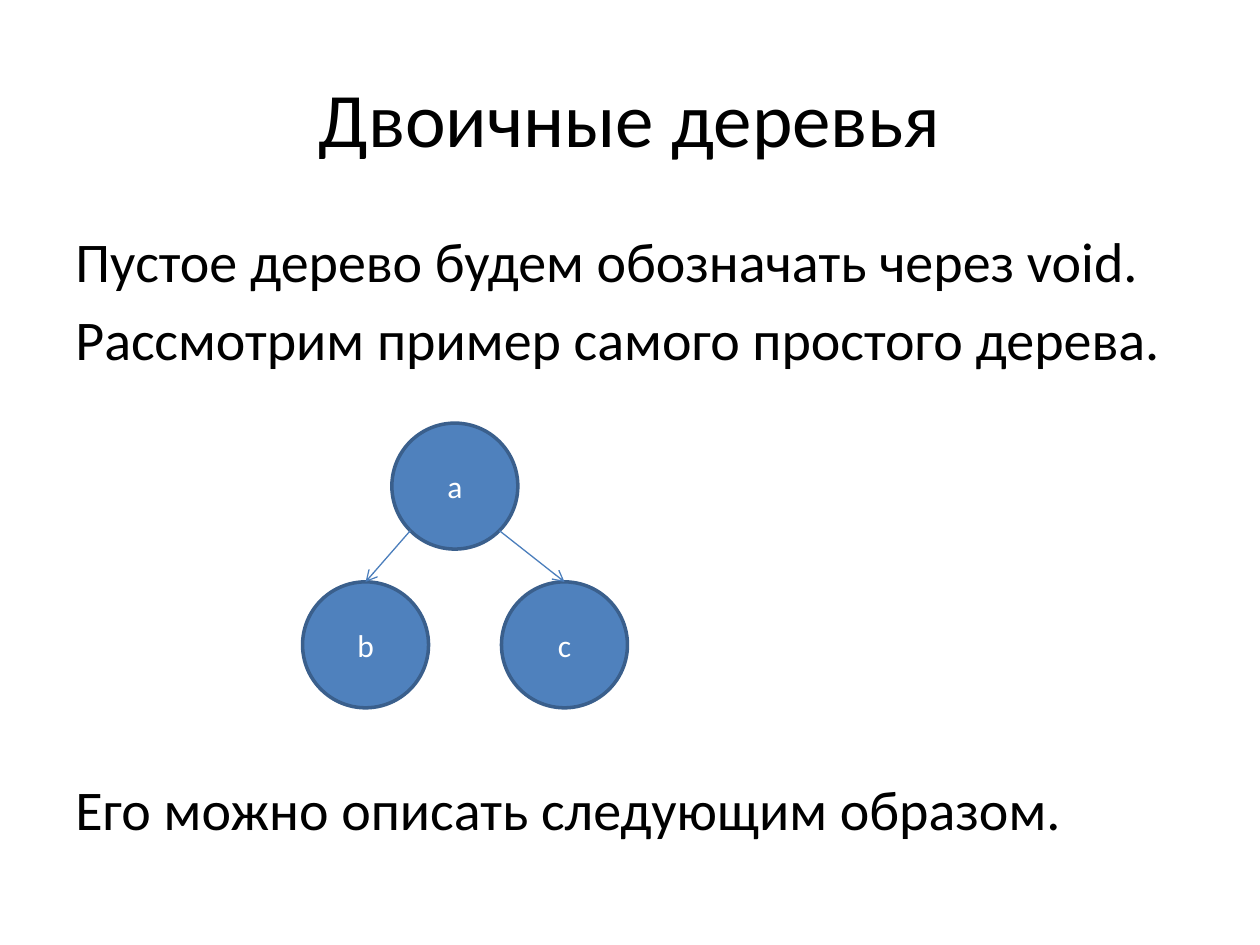
import math
from dataclasses import dataclass

import pptx
import pptx.dml.color
import pptx.enum.shapes
import pptx.enum.text
import pptx.oxml.ns
import pptx.util
from lxml import etree

Cm = pptx.util.Cm
Pt = pptx.util.Pt
RGB = pptx.dml.color.RGBColor
ALIGN = pptx.enum.text.PP_ALIGN
ANCHOR = pptx.enum.text.MSO_ANCHOR
SHAPE = pptx.enum.shapes.MSO_SHAPE
LINK = pptx.enum.shapes.MSO_CONNECTOR
qn = pptx.oxml.ns.qn

BLACK = RGB(0, 0, 0)
WHITE = RGB(255, 255, 255)
BLUE = RGB(0x4F, 0x81, 0xBD)
NAVY = RGB(0x3A, 0x5F, 0x8C)
STEEL = RGB(0x4B, 0x7E, 0xBC)

SIZE = 2.54  # node diameter, cm


@dataclass
class Node:
    name: str
    left: float
    top: float


@dataclass
class Line:
    text: str
    gap: float = 0  # space before, points


def style(para, size: int, color: RGB, align) -> None:
    para.alignment = align
    look = {"name": "Calibri", "size": Pt(size)}
    for key, value in look.items():
        setattr(para.font, key, value)
    para.font.color.rgb = color


def add_text(slide, box: tuple, lines: list[Line], size: int, align, anchor) -> None:
    frame = slide.shapes.add_textbox(*map(Cm, box)).text_frame
    frame.word_wrap = True
    frame.vertical_anchor = anchor
    for i, line in enumerate(lines):
        para = frame.paragraphs[0] if i == 0 else frame.add_paragraph()
        para.text = line.text
        para.space_before = Pt(line.gap)
        style(para, size, BLACK, align)


def add_node(slide, node: Node):
    disc = slide.shapes.add_shape(
        SHAPE.OVAL, Cm(node.left), Cm(node.top), Cm(SIZE), Cm(SIZE))
    disc.shadow.inherit = False
    disc.fill.solid()
    disc.fill.fore_color.rgb = BLUE
    disc.line.color.rgb = NAVY
    disc.line.width = Pt(2)
    frame = disc.text_frame
    frame.vertical_anchor = ANCHOR.MIDDLE
    frame.text = node.name
    style(frame.paragraphs[0], 18, WHITE, ALIGN.CENTER)
    return disc


def add_edge(slide, root: Node, side: int, child) -> None:
    """Arrow from the root's lower diagonal (side -1 or 1) to the child's top."""
    half = SIZE / 2
    reach = half * math.sqrt(0.5)
    x = Cm(root.left + half + side * reach)
    y = Cm(root.top + half + reach)
    edge = slide.shapes.add_connector(LINK.STRAIGHT, x, y, x, y)
    edge.end_connect(child, 0)
    edge.line.color.rgb = STEEL
    edge.line.width = Pt(0.75)
    tail = etree.SubElement(edge.line._get_or_add_ln(), qn("a:tailEnd"))
    tail.set("type", "arrow")
    etree.SubElement(edge._element.spPr, qn("a:effectLst"))


def main() -> None:
    deck = pptx.Presentation()
    deck.slide_width, deck.slide_height = Cm(25.4), Cm(19.05)
    slide = deck.slides.add_slide(deck.slide_layouts[6])

    # Title and body, with room for the tree before the last line
    add_text(slide, (1.27, 0.76, 22.86, 3.18), [Line("Двоичные деревья")],
             44, ALIGN.CENTER, ANCHOR.MIDDLE)
    body = [
        Line("Пустое дерево будем обозначать через void."),
        Line("Рассмотрим пример самого простого дерева.", 6),
        Line("Его можно описать следующим образом.", 230),
    ]
    add_text(slide, (1.27, 4.45, 22.86, 12.57), body,
             32, ALIGN.LEFT, ANCHOR.TOP)

    # Tree
    root = Node("a", 7.9, 8.53)
    kids = {1: Node("c", 10.11, 11.73), -1: Node("b", 6.1, 11.73)}
    add_node(slide, root)
    discs = {side: add_node(slide, kid) for side, kid in kids.items()}
    for side, disc in discs.items():
        add_edge(slide, root, side, disc)

    deck.save("out.pptx")


if __name__ == "__main__":
    main()
